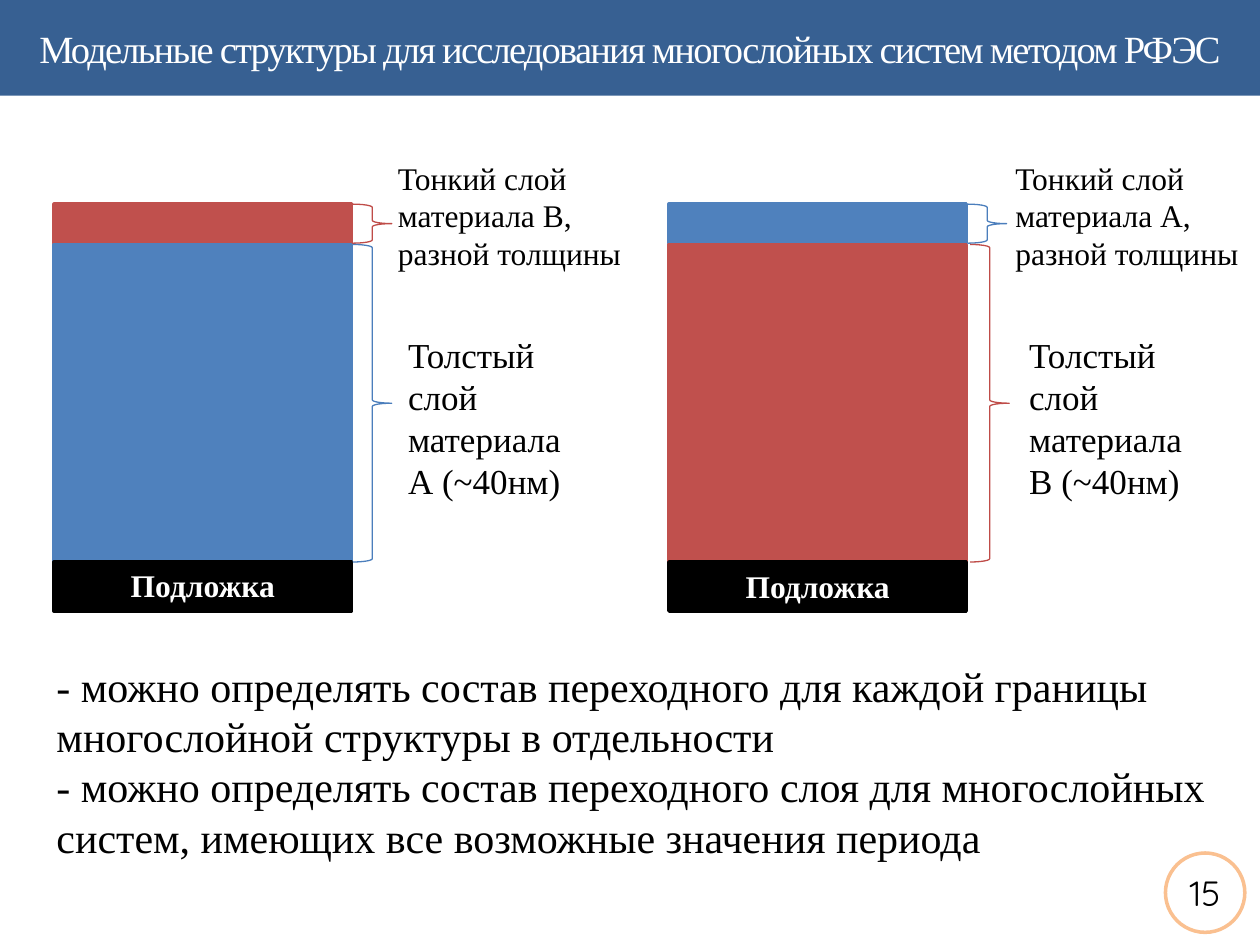
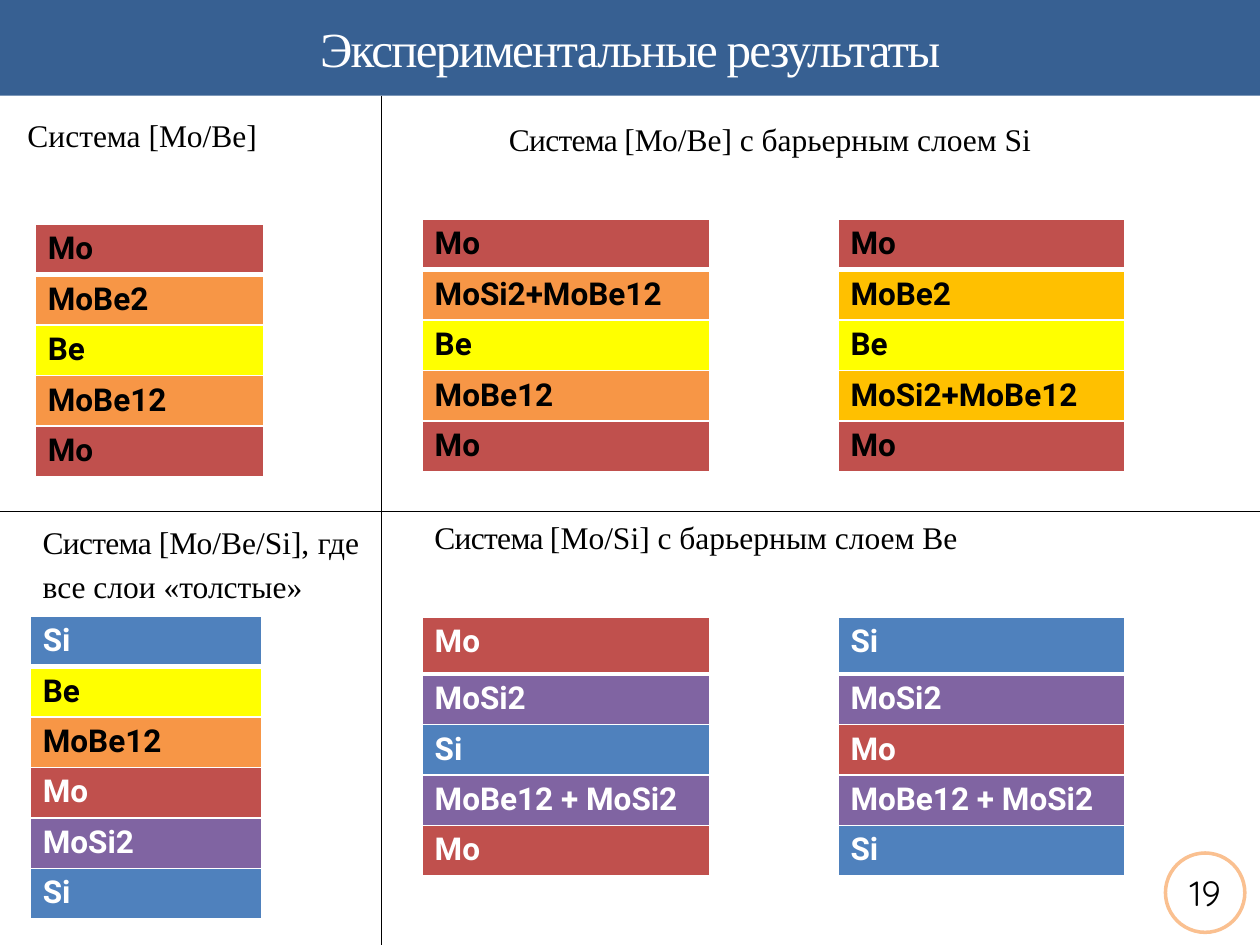
import pptx
import pptx.util
import pptx.dml.color
import pptx.enum.shapes
import pptx.enum.text
import pptx.oxml
import pptx.oxml.ns
import lxml.etree

Inches, Pt = pptx.util.Inches, pptx.util.Pt
SHAPE = pptx.enum.shapes.MSO_SHAPE
ALIGN = pptx.enum.text.PP_ALIGN
ANCHOR = pptx.enum.text.MSO_ANCHOR
FIT = pptx.enum.text.MSO_AUTO_SIZE
qn = pptx.oxml.ns.qn

COLORS = {
    "band": "376092", "ring": "FAC090", "white": "FFFFFF", "black": "000000",
    "red": "C0504D", "blue": "4F81BD", "orange": "F79646", "gold": "FFC000",
    "yellow": "FFFF00", "purple": "8064A2",
    "red line": "BF4C48", "blue line": "4B7EBC",
}
SERIF, SANS, NUMBER = "Times New Roman", "Roboto", "Quicksand"
BAND_H = 0.76
ROW_H = 0.4


class Deck:
    """Shared style and the slide being built."""

    def __init__(self):
        self.prs = pptx.Presentation()
        self.prs.slide_width, self.prs.slide_height = Inches(10), Inches(7.5)
        self.s = None

    def color(self, name):
        return pptx.dml.color.RGBColor.from_string(COLORS[name])

    def font(self, p, size, color="black", name=SERIF, bold=False):
        p.font.size, p.font.name, p.font.bold = Pt(size), name, bold
        p.font.color.rgb = self.color(color)

    def run(self, p, text, spacing=0):
        r = p.add_run()
        r.text = text
        if spacing:
            r.font._element.set("spc", str(round(spacing * 100)))

    def shape(self, kind, x, y, w, h, fill=None, line=None, width=2):
        sp = self.s.shapes.add_shape(kind, Inches(x), Inches(y), Inches(w), Inches(h))
        sp.shadow.inherit = False
        if fill:
            sp.fill.solid()
            sp.fill.fore_color.rgb = self.color(fill)
        else:
            sp.fill.background()
        if line:
            sp.line.color.rgb = self.color(line)
            sp.line.width = Pt(width)
        else:
            sp.line.fill.background()
        return sp

    def slide(self, title, size, number):
        self.s = self.prs.slides.add_slide(self.prs.slide_layouts[5])
        # Band behind the title
        band = self.shape(SHAPE.RECTANGLE, 0, 0, 10, BAND_H, "band")
        self.s.shapes._spTree.insert(2, band._element)
        # Title
        sp = self.s.shapes.title
        sp.left, sp.top, sp.width, sp.height = 0, 0, Inches(10), Inches(BAND_H)
        tf = sp.text_frame
        tf.auto_size, tf.vertical_anchor = FIT.NONE, ANCHOR.MIDDLE
        p = tf.paragraphs[0]
        p.alignment = ALIGN.CENTER
        self.font(p, size, "white")
        self.run(p, title, -1)
        # Page number
        tf = self.shape(SHAPE.OVAL, 9.25, 6.77, 0.63, 0.63, "white", "ring").text_frame
        tf.margin_left = tf.margin_right = tf.margin_top = tf.margin_bottom = Inches(0.04)
        tf.vertical_anchor = ANCHOR.MIDDLE
        p = tf.paragraphs[0]
        p.alignment = ALIGN.CENTER
        self.font(p, 20, name=NUMBER)
        self.run(p, number)

    def text(self, x, y, w, h, paragraphs, size=18, color="black", bold=False,
             align=ALIGN.LEFT, spacing=None):
        """Each paragraph is a list of (text, letter spacing) runs."""
        tf = self.s.shapes.add_textbox(Inches(x), Inches(y), Inches(w), Inches(h)).text_frame
        tf.word_wrap, tf.auto_size = True, FIT.SHAPE_TO_FIT_TEXT
        for i, runs in enumerate(paragraphs):
            p = tf.add_paragraph() if i else tf.paragraphs[0]
            p.alignment = align
            if spacing:
                p.line_spacing = spacing
            self.font(p, size, color, bold=bold)
            for text, letter_spacing in runs:
                self.run(p, text, letter_spacing)

    def border(self, cell, sides):
        tcPr = cell._tc.get_or_add_tcPr()
        for i, (side, width) in enumerate(sides):
            ln = lxml.etree.Element(qn("a:ln" + side), w=str(Pt(width)))
            fill = lxml.etree.SubElement(ln, qn("a:solidFill"))
            lxml.etree.SubElement(fill, qn("a:srgbClr"), val=COLORS["white"])
            tcPr.insert(i, ln)

    def stack(self, x, y, w, layers, first_h=ROW_H):
        """One-column table of (material, fill, text colour) layers."""
        heights = [first_h] + [ROW_H] * (len(layers) - 1)
        table = self.s.shapes.add_table(len(layers), 1, Inches(x), Inches(y),
                                        Inches(w), Inches(sum(heights))).table
        for i, (material, fill, color) in enumerate(layers):
            table.rows[i].height = Inches(heights[i])
            cell = table.cell(i, 0)
            cell.fill.solid()
            cell.fill.fore_color.rgb = self.color(fill)
            top, bottom = (1 if i == 0 else 3 if i == 1 else 1), (3 if i == 0 else 1)
            self.border(cell, [("L", 1), ("R", 1), ("T", top), ("B", bottom)])
            p = cell.text_frame.paragraphs[0]
            self.font(p, 18, color, SANS, True)
            self.run(p, material)

    def line(self, x1, y1, x2, y2):
        c = self.s.shapes.add_connector(pptx.enum.shapes.MSO_CONNECTOR.STRAIGHT,
                                        Inches(x1), Inches(y1), Inches(x2), Inches(y2))
        c.line.color.rgb, c.line.width = self.color("black"), Pt(0.75)
        lxml.etree.SubElement(c._element.spPr, qn("a:effectLst"))


def model_structures(deck):
    deck.slide("Модельные структуры для исследования многослойных систем методом РФЭС", 22, "15")
    thin_y, thick_y, base_y = 1.62, 1.94, 4.46
    thin_h, thick_h, w = 0.31, 2.52, 2.36
    # left edge, thin and thick layers, brace and caption positions, substrate caption
    structures = [
        (0.43, "red", "В", "blue", "А", 2.8, 2.8, 3.06, 3.14, 4.44),
        (5.31, "blue", "А", "red", "В", 7.68, 7.7, 7.96, 8.07, 4.45),
    ]
    for (x, thin, thin_name, thick, thick_name, thin_brace, thick_brace,
         thin_x, thick_x, base_text_y) in structures:
        # Layers
        for y, h, color in ((thin_y, thin_h, thin), (thick_y, thick_h, thick),
                            (base_y, 0.39, "black")):
            deck.shape(SHAPE.RECTANGLE, x, y, w, h, color, color)
        deck.text(x, base_text_y, w, 0.4, [[("Подложка", 0)]], color="white",
                  bold=True, align=ALIGN.CENTER)
        # Braces
        for brace_x, y, h, color in ((thin_brace, thin_y, thin_h, thin),
                                     (thick_brace, thick_y, thick_h, thick)):
            deck.shape(SHAPE.RIGHT_BRACE, brace_x, y, 0.31, h, line=color + " line", width=0.75)
        # Captions
        deck.text(thin_x, 1.21, 2.22, 1.01,
                  [[(f"Тонкий слой материала {thin_name}, разной толщины", 0)]])
        deck.text(thick_x, 2.6, 1.43, 1.45,
                  [[(f"Толстый слой материала {thick_name} (~40нм)", 0)]], 20)
    # Conclusions
    deck.text(0.35, 5.19, 9.53, 1.72, [
        [("- можно определять состав переходного для каждой границы "
          "многослойной структуры в отдельности", 0)],
        [("- можно определять состав переходного слоя для многослойных "
          "систем, имеющих все возможные значения периода", 0)],
    ], 24)


def experimental_results(deck):
    deck.slide("Экспериментальные результаты", 28, "19")
    # Headings
    start = ("Система [", -0.4)
    deck.text(0.12, 0.87, 2.13, 0.4, [[("Система [Mo/Be]", 0)]])
    deck.text(3.94, 0.86, 5, 0.45, [[start, ("Мо/Ве] с барьерным слоем Si", 0)]],
              align=ALIGN.JUSTIFY, spacing=1.15)
    deck.text(0.24, 4.06, 2.71, 0.8, [[start, ("Мо/Ве/Si], где все слои «толстые»", 0)]],
              align=ALIGN.JUSTIFY, spacing=1.15)
    deck.text(3.35, 4.06, 5.83, 0.4, [[start, ("Mo/Si] с барьерным слоем Be", 0)]])
    # Layer stacks
    mo, be = ("Mo", "red", "black"), ("Be", "yellow", "black")
    mobe12 = ("MoBe12", "orange", "black")
    mo_w, si, mosi2 = ("Mo", "red", "white"), ("Si", "blue", "white"), ("MoSi2", "purple", "white")
    mixed = ("MoBe12 + MoSi2", "purple", "white")
    col1, col2, w = 3.35, 6.65, 2.28
    deck.stack(0.28, 1.78, 1.81, [mo, ("MoBe2", "orange", "black"), be, mobe12, mo])
    deck.stack(col1, 1.74, w, [mo, ("MoSi2+MoBe12", "orange", "black"), be, mobe12, mo])
    deck.stack(col2, 1.74, w, [mo, ("MoBe2", "gold", "black"), be,
                               ("MoSi2+MoBe12", "gold", "black"), mo])
    deck.stack(0.24, 4.89, 1.84, [si, be, mobe12, mo_w, mosi2, si])
    deck.stack(col1, 4.9, w, [mo_w, mosi2, si, mixed, mo_w], 0.45)
    deck.stack(col2, 4.9, w, [si, mosi2, mo_w, mixed, si], 0.45)
    # Dividers
    deck.line(3.03, BAND_H, 3.03, 7.5)
    deck.line(0, 4.06, 10, 4.06)


def main():
    deck = Deck()
    model_structures(deck)
    experimental_results(deck)
    deck.prs.save("out.pptx")


if __name__ == "__main__":
    main()
